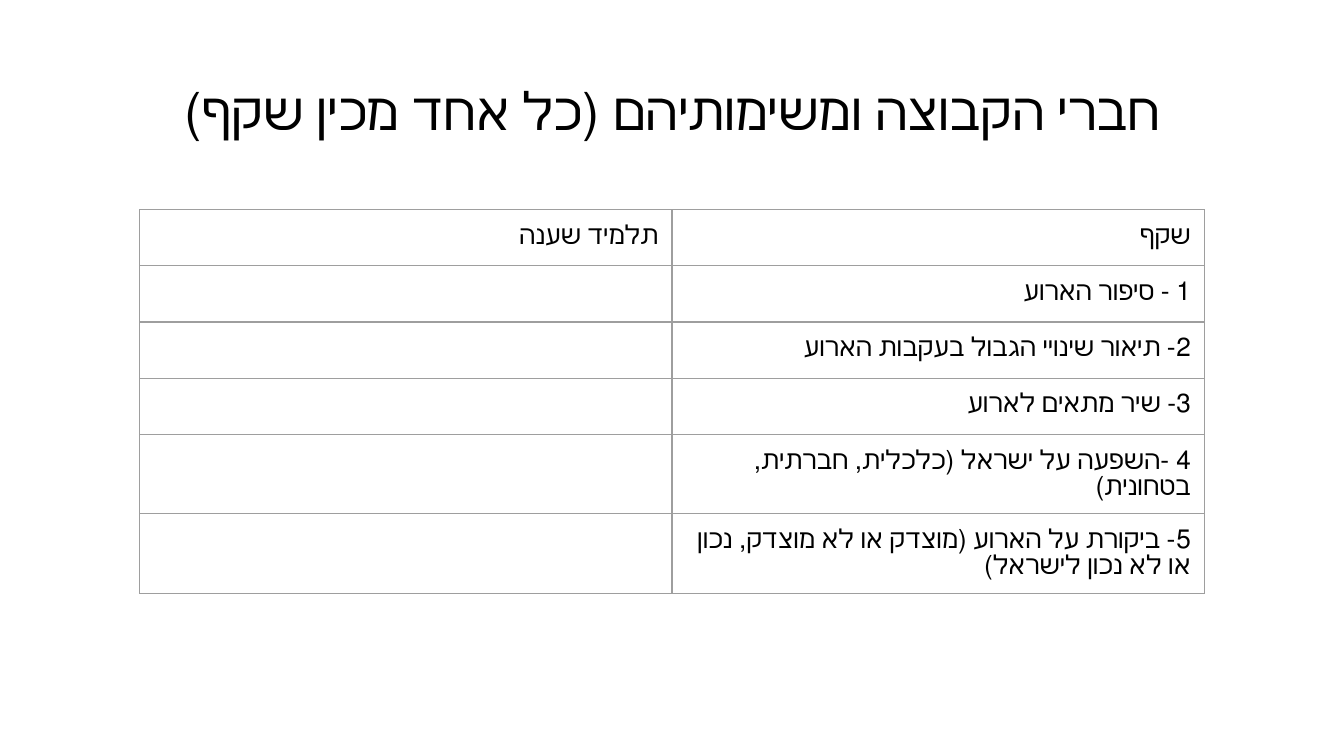
import pptx
import pptx.dml.color
import pptx.enum.text
import pptx.oxml.ns
import pptx.util
from lxml import etree
from pptx.util import Inches

BLACK = pptx.dml.color.RGBColor(0x00, 0x00, 0x00)
BORDER_GRAY = pptx.dml.color.RGBColor(0x9E, 0x9E, 0x9E)
FONT_NAME = "Arial"
MARGIN = Inches(0.1)
qualified = pptx.oxml.ns.qn


def format_hebrew(paragraph, size, alignment):
    paragraph.alignment = alignment
    paragraph.font.size = pptx.util.Pt(size)
    paragraph.font.name = FONT_NAME
    paragraph.font.color.rgb = BLACK
    paragraph._p.get_or_add_pPr().set("rtl", "1")


def add_borders(cell):
    properties = cell._tc.get_or_add_tcPr()
    for side in ("lnL", "lnR", "lnT", "lnB"):
        line = etree.SubElement(properties, qualified(f"a:{side}"), w=str(pptx.util.Pt(0.75)))
        fill = etree.SubElement(line, qualified("a:solidFill"))
        etree.SubElement(fill, qualified("a:srgbClr"), val=str(BORDER_GRAY))


presentation = pptx.Presentation()
presentation.slide_width = Inches(10)
presentation.slide_height = Inches(10) * 9 // 16
slide = presentation.slides.add_slide(presentation.slide_layouts[5])

title = slide.shapes.title
title.left, title.top = Inches(0.69), Inches(0.3)
title.width, title.height = Inches(8.62), Inches(1.09)
frame = title.text_frame
frame.text = "חברי הקבוצה ומשימותיהם (כל אחד מכין שקף)"
frame.word_wrap = True
frame.auto_size = pptx.enum.text.MSO_AUTO_SIZE.NONE
frame.vertical_anchor = pptx.enum.text.MSO_ANCHOR.MIDDLE
frame.margin_left = frame.margin_right = MARGIN
frame.margin_top = frame.margin_bottom = MARGIN
format_hebrew(frame.paragraphs[0], 28, pptx.enum.text.PP_ALIGN.CENTER)
frame.paragraphs[0].line_spacing = 0.9

rows = [
    ("תלמיד שענה", "שקף"),
    ("", "1 - סיפור הארוע"),
    ("", "2- תיאור שינויי הגבול בעקבות הארוע"),
    ("", "3- שיר מתאים לארוע"),
    ("", "4 -השפעה על ישראל (כלכלית, חברתית, בטחונית)"),
    ("", "5- ביקורת על הארוע (מוצדק או לא מוצדק, נכון או לא נכון לישראל)"),
]
row_height = Inches(2.5) // len(rows)
table = slide.shapes.add_table(
    len(rows), 2, Inches(1.04), Inches(1.56), Inches(7.92), row_height * len(rows)
).table
table.first_row = False
table.horz_banding = False

for row_index, texts in enumerate(rows):
    table.rows[row_index].height = row_height
    for column_index, text in enumerate(texts):
        cell = table.cell(row_index, column_index)
        cell.margin_left = cell.margin_right = MARGIN
        cell.margin_top = cell.margin_bottom = MARGIN
        add_borders(cell)
        cell.fill.background()
        paragraph = cell.text_frame.paragraphs[0]
        if text:
            paragraph.text = text
        else:
            etree.SubElement(paragraph._p, qualified("a:endParaRPr"), sz="1400")
        format_hebrew(paragraph, 14, pptx.enum.text.PP_ALIGN.RIGHT)

presentation.save("out.pptx")
